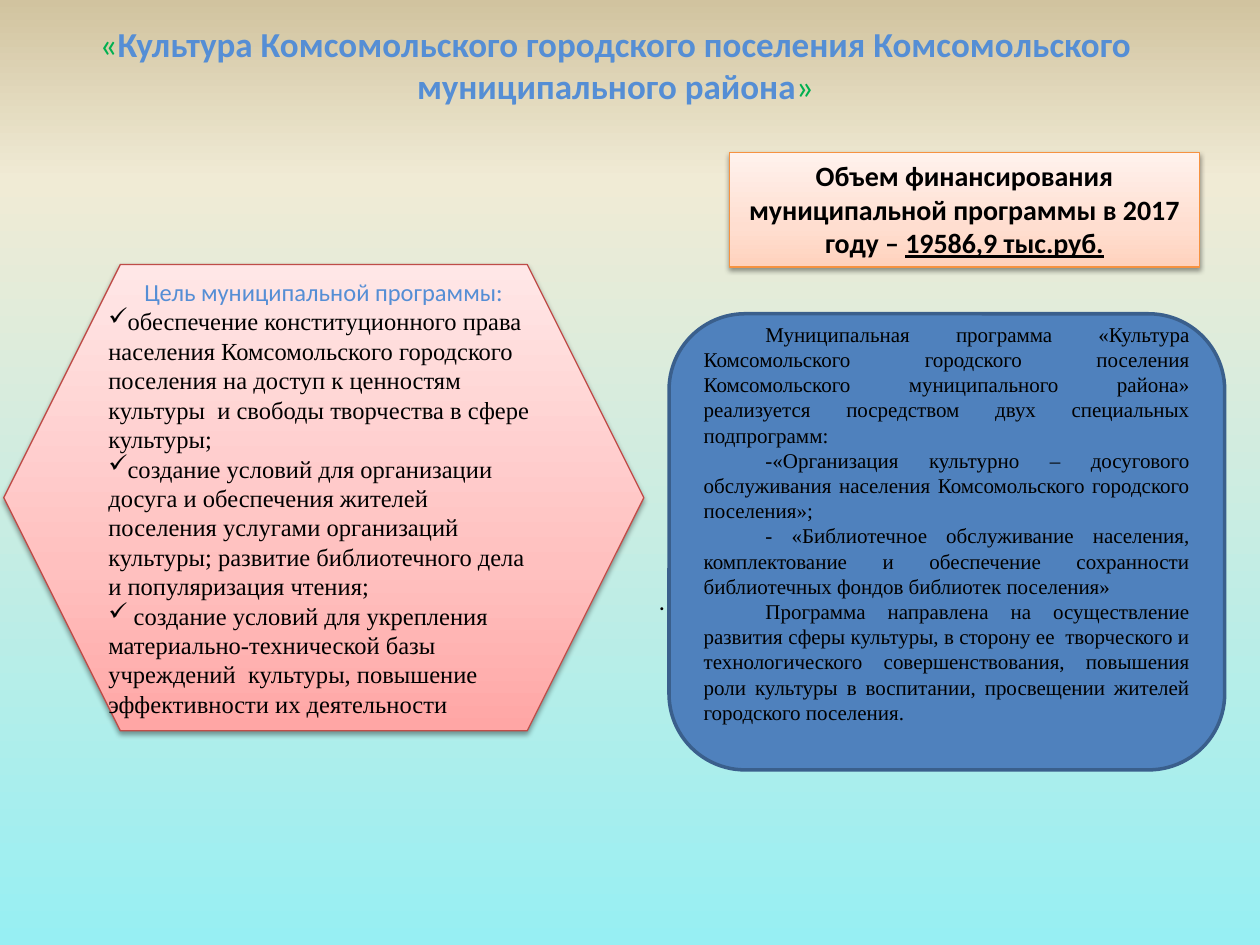
from dataclasses import dataclass

from lxml import etree
from pptx import Presentation
from pptx.dml.color import RGBColor
from pptx.enum.shapes import MSO_SHAPE
from pptx.enum.text import MSO_ANCHOR, MSO_AUTO_SIZE, PP_ALIGN
from pptx.oxml import parse_xml
from pptx.oxml.ns import nsdecls, qn
from pptx.util import Inches, Pt

CENTER, LEFT, JUSTIFY = PP_ALIGN.CENTER, PP_ALIGN.LEFT, PP_ALIGN.JUSTIFY
MIDDLE, TOP = MSO_ANCHOR.MIDDLE, MSO_ANCHOR.TOP


@dataclass(frozen=True)
class Theme:
    heading_font: str = "Calibri"
    body_font: str = "Times New Roman"
    title_size: int = 20
    funding_size: int = 16
    goal_size: int = 14
    program_size: int = 12
    black: str = "000000"
    accent: str = "558ED5"
    quote: str = "00B050"
    program_fill: str = "4F81BD"
    program_line: str = "3A5F8C"
    goal_line: str = "BF4C48"
    funding_line: str = "F69240"
    background: tuple = ((0, "97EFF3"), (81, "F0EBD5"), (100, "D1C39F"))
    goal_fill: tuple = ((0, "FFA6A5"), (35, "FFC0BF"), (100, "FFE7E7"))
    funding_fill: tuple = ((0, "FFD2BD"), (35, "FFDED0"), (100, "FFF2ED"))


THEME = Theme()

GOALS = (
    "обеспечение конституционного права населения Комсомольского городского "
    "поселения на доступ к ценностям культуры  и свободы творчества в сфере культуры;",
    "создание условий для организации досуга и обеспечения жителей поселения "
    "услугами организаций культуры; развитие библиотечного дела и популяризация чтения;",
    " создание условий для укрепления материально-технической базы "
    "учреждений  культуры, повышение эффективности их деятельности",
)
PROGRAM = (
    "Муниципальная программа «Культура Комсомольского городского поселения "
    "Комсомольского муниципального района» реализуется посредством двух "
    "специальных подпрограмм:",
    "-«Организация культурно – досугового обслуживания населения "
    "Комсомольского городского поселения»;",
    "- «Библиотечное обслуживание населения, комплектование и обеспечение "
    "сохранности библиотечных фондов библиотек поселения»",
    "Программа направлена на осуществление развития сферы культуры, в сторону "
    "ее  творческого и технологического совершенствования, повышения роли "
    "культуры в воспитании, просвещении жителей городского поселения.",
)


def fill_gradient(fill, element, stops):
    """Fill from bottom to top with (percent, colour) stops."""
    fill.gradient()
    fill.gradient_angle = 90
    stop_list = element.find(".//" + qn("a:gsLst"))
    for stop in list(stop_list):
        stop_list.remove(stop)
    for percent, color in stops:
        stop = etree.SubElement(stop_list, qn("a:gs"), pos=str(percent * 1000))
        etree.SubElement(stop, qn("a:srgbClr"), val=color)


def add_shadow(shape):
    shape._element.spPr.append(parse_xml(
        f'<a:effectLst {nsdecls("a")}><a:outerShdw blurRad="{Pt(3.1)}" '
        f'dist="{Pt(1.6)}" dir="5400000" rotWithShape="0"><a:srgbClr val="000000">'
        '<a:alpha val="38000"/></a:srgbClr></a:outerShdw></a:effectLst>'))


def add_panel(slide, preset, box, fill, line, line_width=0.75):
    """Add a shape; a tuple as fill gives a gradient with a shadow."""
    shape = slide.shapes.add_shape(preset, *map(Inches, box))
    if isinstance(fill, tuple):
        fill_gradient(shape.fill, shape._element.spPr, fill)
    else:
        shape.fill.solid()
        shape.fill.fore_color.rgb = RGBColor.from_string(fill)
    shape.line.color.rgb = RGBColor.from_string(line)
    shape.line.width = Pt(line_width)
    if isinstance(fill, tuple):
        add_shadow(shape)
    else:
        shape.shadow.inherit = False
    return shape


def prepare_frame(shape, anchor=MIDDLE):
    frame = shape.text_frame
    frame.word_wrap = True
    frame.vertical_anchor = anchor
    return frame


def add_paragraph(frame, alignment, first=False):
    paragraph = frame.paragraphs[0] if first else frame.add_paragraph()
    paragraph.alignment = alignment
    return paragraph


def add_run(paragraph, text, size, color=THEME.black, outlined=False,
            name=THEME.heading_font, **formats):
    run = paragraph.add_run()
    run.text = text
    for key, value in {"name": name, "size": Pt(size), **formats}.items():
        setattr(run.font, key, value)
    run.font.color.rgb = RGBColor.from_string(color)
    if outlined:
        run._r.get_or_add_rPr().insert(0, parse_xml(
            f'<a:ln {nsdecls("a")} w="{Pt(0.75)}"><a:solidFill>'
            f'<a:srgbClr val="{THEME.accent}"/></a:solidFill></a:ln>'))


def add_title(slide, box):
    frame = prepare_frame(slide.shapes.add_textbox(*map(Inches, box)))
    paragraph = add_paragraph(frame, CENTER, first=True)
    size = THEME.title_size
    add_run(paragraph, "«", size, THEME.quote, outlined=True)
    add_run(paragraph, "Культура Комсомольского городского поселения "
            "Комсомольского муниципального района", size, THEME.accent, bold=True)
    add_run(paragraph, "»", size, THEME.quote, outlined=True)


def add_goals(slide, box):
    shape = add_panel(slide, MSO_SHAPE.HEXAGON, box, THEME.goal_fill, THEME.goal_line)
    frame = prepare_frame(shape)
    add_run(add_paragraph(frame, CENTER, first=True), "Цель муниципальной программы:",
            THEME.goal_size, THEME.accent, outlined=True)
    for goal in GOALS:
        paragraph = add_paragraph(frame, LEFT)
        etree.SubElement(paragraph._p.get_or_add_pPr(), qn("a:buChar"), char="✓")
        add_run(paragraph, goal, THEME.goal_size, name=THEME.body_font)


def add_funding(slide, box):
    shape = add_panel(slide, MSO_SHAPE.RECTANGLE, box,
                      THEME.funding_fill, THEME.funding_line)
    frame = prepare_frame(shape, TOP)
    frame.auto_size = MSO_AUTO_SIZE.SHAPE_TO_FIT_TEXT
    paragraph = add_paragraph(frame, CENTER, first=True)
    size = THEME.funding_size
    add_run(paragraph, "Объем финансирования муниципальной программы в 2017 году – ",
            size, bold=True)
    add_run(paragraph, "19586,9 тыс.руб.", size, bold=True, underline=True)


def add_full_stop(slide, box):
    frame = prepare_frame(slide.shapes.add_textbox(*map(Inches, box)))
    add_run(add_paragraph(frame, JUSTIFY, first=True), ".", THEME.goal_size)


def add_program(slide, box):
    shape = add_panel(slide, MSO_SHAPE.ROUNDED_RECTANGLE, box,
                      THEME.program_fill, THEME.program_line, line_width=2)
    frame = prepare_frame(shape)
    frame.margin_bottom = Inches(0.35)
    for index, text in enumerate(PROGRAM):
        paragraph = add_paragraph(frame, JUSTIFY, first=index == 0)
        paragraph._p.get_or_add_pPr().set("indent", str(Inches(0.49)))
        add_run(paragraph, text, THEME.program_size, name=THEME.body_font)


def main():
    presentation = Presentation()
    presentation.slide_width, presentation.slide_height = Inches(10), Inches(7.5)
    slide = presentation.slides.add_slide(presentation.slide_layouts[6])
    fill_gradient(slide.background.fill, slide._element, THEME.background)
    add_title(slide, (0.2, 0.11, 9.37, 0.8))
    add_goals(slide, (0.03, 2.1, 5.08, 3.7))
    add_funding(slide, (5.79, 1.21, 3.73, 0.91))
    add_full_stop(slide, (5.13, 2.25, 4.61, 5.03))
    add_program(slide, (5.31, 2.49, 4.41, 3.62))
    presentation.save("out.pptx")


if __name__ == "__main__":
    main()
